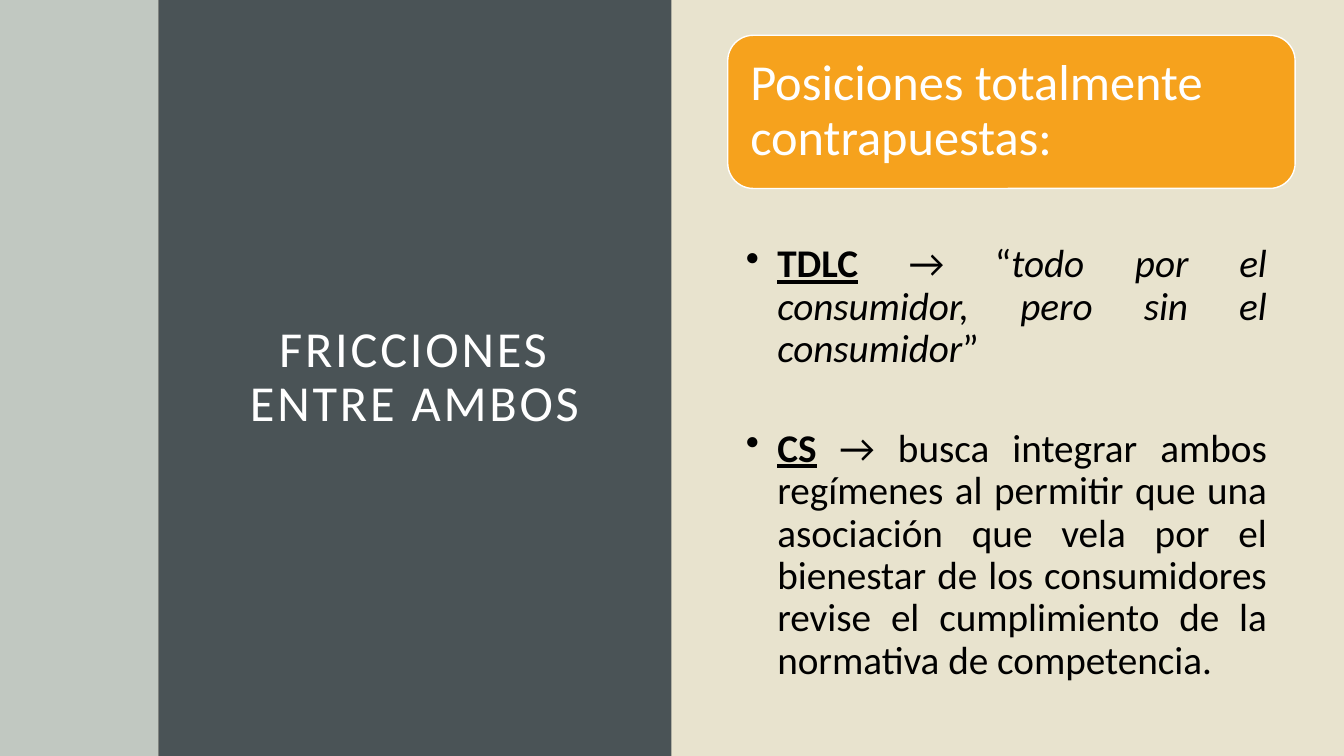
from dataclasses import dataclass

from lxml.etree import SubElement
from pptx import Presentation
from pptx.dml.color import RGBColor
from pptx.enum.shapes import MSO_SHAPE as Preset
from pptx.enum.text import MSO_ANCHOR as Anchor, PP_ALIGN as Align
from pptx.oxml.ns import qn
from pptx.shapes.autoshape import Shape
from pptx.slide import Slide
from pptx.text.text import TextFrame
from pptx.util import Cm, Pt

FONT = "Calibri"
SAND = RGBColor(0xE8, 0xE3, 0xCE)
MIST = RGBColor(0x9B, 0xAF, 0xB5)
SLATE = RGBColor(0x4A, 0x53, 0x56)
ORANGE = RGBColor(0xF6, 0xA2, 0x1D)
WHITE = RGBColor(0xFF, 0xFF, 0xFF)
BLACK = RGBColor(0x00, 0x00, 0x00)
PAGE_WIDTH, PAGE_HEIGHT = 33.87, 19.05
BULLET_INDENT = Cm(0.79)


@dataclass(frozen=True)
class Area:
    """Position and size in centimetres."""
    left: float
    top: float
    width: float
    height: float

    def lengths(self) -> tuple[Cm, Cm, Cm, Cm]:
        return Cm(self.left), Cm(self.top), Cm(self.width), Cm(self.height)


@dataclass(frozen=True)
class Span:
    text: str
    term: bool = False
    italic: bool = False


MIST_BAND = Area(0, 0, 3.99, PAGE_HEIGHT)
SLATE_BAND = Area(3.99, 0, 12.93, PAGE_HEIGHT)
TITLE = Area(5.41, 2.95, 10.08, 13.16)
HEADING = Area(18.34, 0.89, 14.3, 3.86)
POSITIONS = Area(18.34, 4.75, 14.3, 13.16)

POSITION_ITEMS = [
    [
        Span("TDLC", term=True),
        Span(" → “"),
        Span("todo por el consumidor, pero sin el consumidor", italic=True),
        Span("”"),
    ],
    [
        Span("CS", term=True),
        Span(" → busca integrar ambos regímenes al permitir que una asociación "
             "que vela por el bienestar de los consumidores revise el "
             "cumplimiento de la normativa de competencia."),
    ],
]


def add_panel(page: Slide, area: Area, color: RGBColor,
              preset: Preset = Preset.RECTANGLE) -> Shape:
    panel = page.shapes.add_shape(preset, *area.lengths())
    panel.shadow.inherit = False
    panel.fill.solid()
    panel.fill.fore_color.rgb = color
    panel.line.fill.background()
    return panel


def set_opacity(shape: Shape, percent: int) -> None:
    color = shape.fill._xPr.find(qn("a:solidFill"))[0]
    SubElement(color, qn("a:alpha")).set("val", str(percent * 1000))


def set_margins(frame: TextFrame, left: float, top: float,
                right: float, bottom: float) -> None:
    frame.word_wrap = True
    frame.margin_left, frame.margin_top = Cm(left), Cm(top)
    frame.margin_right, frame.margin_bottom = Cm(right), Cm(bottom)


def write_headline(frame: TextFrame, text: str, margin: float,
                   alignment: Align, spacing: int = 0) -> None:
    """Write one white line of large text; spacing is in points."""
    set_margins(frame, margin, margin, margin, margin)
    frame.vertical_anchor = Anchor.MIDDLE
    frame.text = text
    para = frame.paragraphs[0]
    para.alignment = alignment
    para.line_spacing = 0.9
    font = para.runs[0].font
    font.name, font.size, font.color.rgb = FONT, Pt(36), WHITE
    font._element.set("spc", str(spacing * 100))


def write_bullets(frame: TextFrame, items: list[list[Span]]) -> None:
    for index, spans in enumerate(items):
        para = frame.add_paragraph() if index else frame.paragraphs[0]
        para.alignment = Align.JUSTIFY
        para.line_spacing = 0.9
        para.space_before = Pt(41 if index else 0)
        properties = para._p.get_or_add_pPr()
        properties.set("marL", str(BULLET_INDENT))
        properties.set("indent", str(-BULLET_INDENT))
        SubElement(properties, qn("a:buChar")).set("char", "•")
        for span in spans:
            run = para.add_run()
            run.text = span.text
            font = run.font
            font.name, font.size, font.color.rgb = FONT, Pt(28), BLACK
            font.bold = font.underline = span.term
            font.italic = span.italic


def main() -> None:
    deck = Presentation()
    deck.slide_width, deck.slide_height = Cm(PAGE_WIDTH), Cm(PAGE_HEIGHT)
    page = deck.slides.add_slide(deck.slide_layouts[6])
    page.background.fill.solid()
    page.background.fill.fore_color.rgb = SAND

    set_opacity(add_panel(page, MIST_BAND, MIST), 50)
    add_panel(page, SLATE_BAND, SLATE)
    title = page.shapes.add_textbox(*TITLE.lengths())
    write_headline(title.text_frame, "FRICCIONES ENTRE AMBOS", 0.51,
                   Align.CENTER, spacing=2)

    heading = add_panel(page, HEADING, ORANGE, Preset.ROUNDED_RECTANGLE)
    heading.line.color.rgb = WHITE
    heading.line.width = Pt(1)
    write_headline(heading.text_frame, "Posiciones totalmente contrapuestas:",
                   0.38, Align.LEFT)

    positions = page.shapes.add_textbox(*POSITIONS.lengths())
    set_margins(positions.text_frame, 0.46, 1.4, 0.71, 0.13)
    write_bullets(positions.text_frame, POSITION_ITEMS)

    deck.save("out.pptx")


if __name__ == "__main__":
    main()
